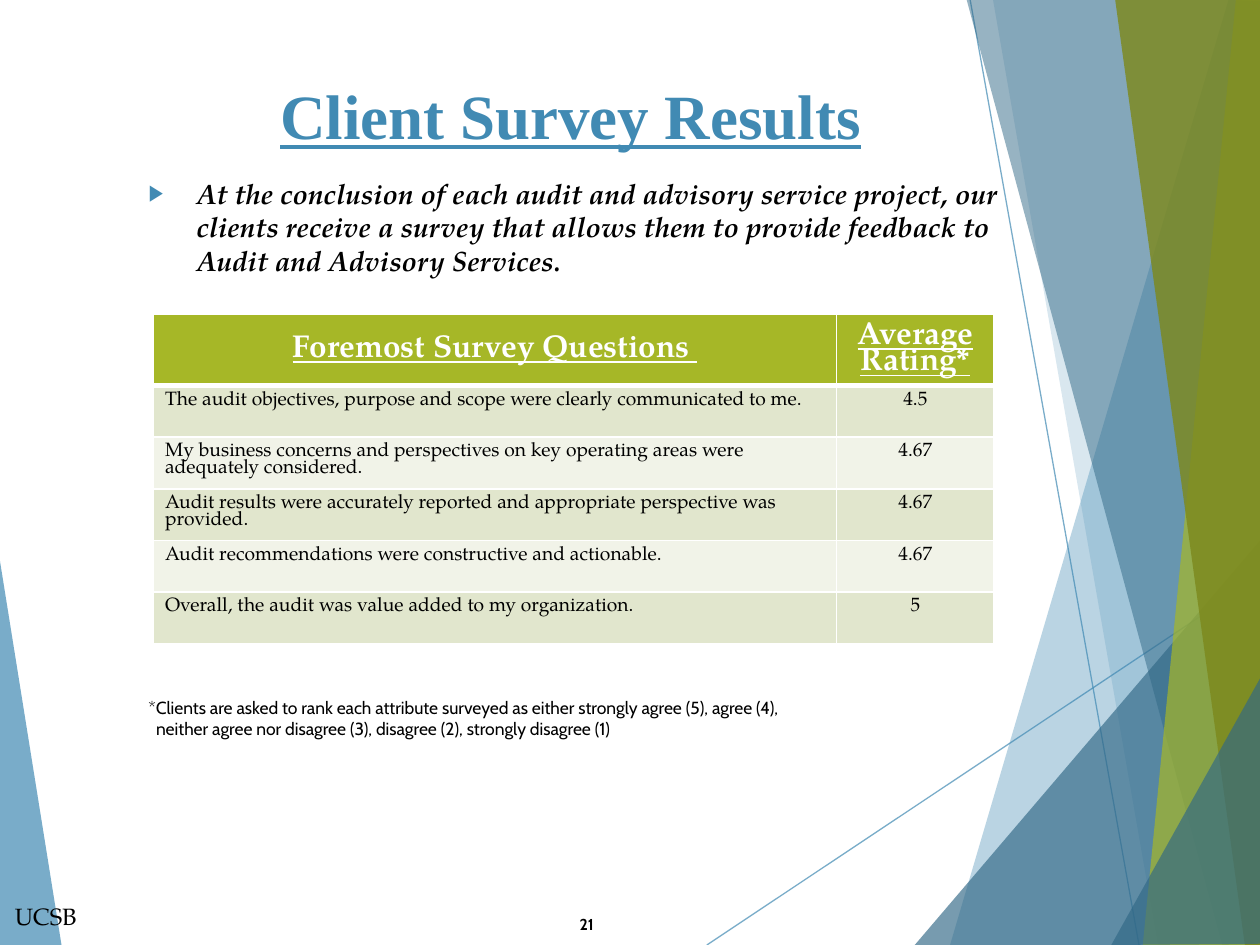
from lxml import etree
from pptx import Presentation
from pptx.dml.color import RGBColor
from pptx.enum.shapes import MSO_CONNECTOR
from pptx.enum.text import MSO_ANCHOR, MSO_AUTO_SIZE, PP_ALIGN
from pptx.oxml import parse_xml
from pptx.oxml.ns import nsdecls, qn
from pptx.util import Inches, Pt

LEFT, CENTER, RIGHT = PP_ALIGN.LEFT, PP_ALIGN.CENTER, PP_ALIGN.RIGHT
TOP, MIDDLE = MSO_ANCHOR.TOP, MSO_ANCHOR.MIDDLE
STRAIGHT = MSO_CONNECTOR.STRAIGHT
COLORS = {
    "blue": "418AB3", "deep blue": "316886", "green": "A6B727", "olive": "7D891D",
    "black": "000000", "white": "FFFFFF", "band dark": "E1E6CD", "band light": "F1F3E8",
}
SERIF, SANS = "TeX Gyre Pagella", "Cabin"


def paint(fill, color, opacity=100):
    """Give a fill a solid colour, with opacity in percent."""
    fill.solid()
    fill.fore_color.rgb = RGBColor.from_string(COLORS[color])
    if opacity < 100:
        tone = fill._xPr.find(qn("a:solidFill"))[0]
        etree.SubElement(tone, qn("a:alpha"), val=str(opacity * 1000))


def write(frame, lines, color="black", align=LEFT, anchor=TOP, spacing=None, **font):
    """Fill a text frame with one formatted paragraph for each line."""
    frame.word_wrap = True
    frame.vertical_anchor = anchor
    for number, line in enumerate(lines):
        para = frame.add_paragraph() if number else frame.paragraphs[0]
        para.alignment = align
        para.space_before = Pt(0)
        if spacing:
            para.line_spacing = spacing
        span = para.add_run()
        span.text = line
        span.font.color.rgb = RGBColor.from_string(COLORS[color])
        for name, value in font.items():
            setattr(span.font, name, value)


deck = Presentation()
deck.slide_width, deck.slide_height = Inches(10), Inches(7.5)
page = deck.slides.add_slide(deck.slide_layouts[1])
shapes = page.shapes
title, body = shapes.title, page.placeholders[1]

# Translucent facets and thin lines, from back to front
left_facet = ("blue", 70, [(-0.01, 4.39), (0.49, 7.51), (-0.01, 7.5)])
right_facets = [
    ("blue", 36, [(9.75, 0), (7.54, 7.5), (10.02, 7.51), (10.01, 0.01)]),
    ("blue", 20, [(7.88, -0.01), (9.19, 7.5), (10.01, 7.5), (10.01, -0.01)]),
    ("deep blue", 66, [(7.26, 7.5), (10, 4.29), (10.01, 7.5)]),
    ("deep blue", 50, [(7.67, -0.01), (9.7, 7.5), (10.01, 7.49), (10.01, -0.01)]),
    ("green", 70, [(9.81, -0.01), (9.07, 7.5), (10.01, 7.5), (10, -0.01)]),
    ("olive", 82, [(8.85, -0.01), (9.88, 7.5), (10.02, 7.5), (10, -0.01)]),
    ("deep blue", 66, [(8.82, 7.5), (10.02, 5.35), (10.02, 7.49)]),
]
for color, opacity, corners in [left_facet] + right_facets:
    points = [(Inches(x), Inches(y)) for x, y in corners]
    builder = shapes.build_freeform(*points[0])
    builder.add_line_segments(points[1:], close=True)
    facet = builder.convert_to_shape()
    facet.shadow.inherit = False
    facet.line.fill.background()
    paint(facet.fill, color, opacity)
    if corners is left_facet[2]:
        for ends in [(5.61, 7.5, 10.01, 4.57), (7.7, 0, 9.04, 7.5)]:
            ray = shapes.add_connector(STRAIGHT, *map(Inches, ends))
            ray.line.width = Pt(0.75)
            paint(ray.line.fill, "blue", 70)
            etree.SubElement(ray._element.spPr, qn("a:effectLst"))

# Title and lead paragraph, brought in front of the facets
for holder, place in [(title, (1.06, 0.56, 6.94, 1.38)), (body, (1.08, 1.35, 6.94, 4.24))]:
    holder.left, holder.top, holder.width, holder.height = map(Inches, place)
    holder.text_frame.auto_size = MSO_AUTO_SIZE.NONE
    shapes._spTree.append(holder._element)
write(title.text_frame, ["Client Survey Results"], "blue", CENTER,
      name="Times New Roman", size=Pt(36), bold=True, underline=True)

bullet = body.text_frame.paragraphs[0]._p.get_or_add_pPr()
bullet.set("marL", str(Inches(0.38)))
bullet.set("indent", str(Inches(-0.38)))
color_node = etree.SubElement(bullet, qn("a:buClr"))
etree.SubElement(color_node, qn("a:srgbClr"), val=COLORS["blue"])
etree.SubElement(bullet, qn("a:buSzPct"), val="80000")
etree.SubElement(bullet, qn("a:buChar"), char="▶")
write(body.text_frame,
      ["At the conclusion of each audit and advisory service project, our clients receive "
       "a survey that allows them to provide feedback to Audit and Advisory Services."],
      name=SERIF, size=Pt(16), bold=True, italic=True)

# Survey table
rows = [
    ("Foremost Survey Questions ", "Average Rating*"),
    ("The audit objectives, purpose and scope were clearly communicated to me.", "4.5"),
    ("My business concerns and perspectives on key operating areas were "
     "adequately considered.", "4.67"),
    ("Audit results were accurately reported and appropriate perspective was "
     "provided.", "4.67"),
    ("Audit recommendations were constructive and actionable.", "4.67"),
    ("Overall, the audit was value added to my organization.", "5"),
]
table = shapes.add_table(len(rows), 2, Inches(1.22), Inches(2.49),
                         Inches(6.67), Inches(2.62)).table
for column, width in zip(table.columns, (5.42, 1.25)):
    column.width = Inches(width)
header_font = dict(color="white", anchor=MIDDLE, size=Pt(18), bold=True, underline=True)
answer_font = dict(color="black", anchor=TOP, size=Pt(11), bold=False, underline=False)
for r, row in enumerate(rows):
    table.rows[r].height = Inches(0.41 if r else 0.57)
    band = ("band light" if r % 2 == 0 else "band dark") if r else "green"
    for c, text in enumerate(row):
        cell = table.cell(r, c)
        props = cell._tc.get_or_add_tcPr()
        widths = {"L": 1, "R": 1, "T": 3 if r == 1 else 1, "B": 1 if r else 3}
        for side, width in widths.items():
            props.append(parse_xml(
                f'<a:ln{side} {nsdecls("a")} w="{Pt(width)}"><a:solidFill>'
                f'<a:srgbClr val="{COLORS["white"]}"/></a:solidFill></a:ln{side}>'))
        paint(cell.fill, band)
        cell.margin_left = cell.margin_right = Inches(0.09)
        write(cell.text_frame, [text], align=LEFT if r and c == 0 else CENTER,
              spacing=0.85, name=SERIF, **(answer_font if r else header_font))
        cell.vertical_anchor = MIDDLE if r == 0 else TOP

# Page number, organisation and footnote
notes = [
    ((4.25, 6.92, 0.56, 0.83), ["21"],
     dict(align=RIGHT, anchor=MIDDLE, name=SANS, size=Pt(9), bold=True)),
    ((0.02, 7.11, 0.8, 0.33), ["UCSB"], dict(name=SERIF, size=Pt(13.5))),
    ((1.08, 5.48, 5.88, 0.44),
     ["*Clients are asked to rank each attribute surveyed as either strongly agree (5), agree (4),",
      "neither agree nor disagree (3), disagree (2), strongly disagree (1)"],
     dict(name=SANS, size=Pt(10))),
]
for place, lines, style in notes:
    box = shapes.add_textbox(*map(Inches, place))
    write(box.text_frame, lines, **style)
# The second footnote line hangs under the text after the asterisk
box.text_frame.paragraphs[1]._p.get_or_add_pPr().set("marL", str(Inches(0.06)))

deck.save("out.pptx")
